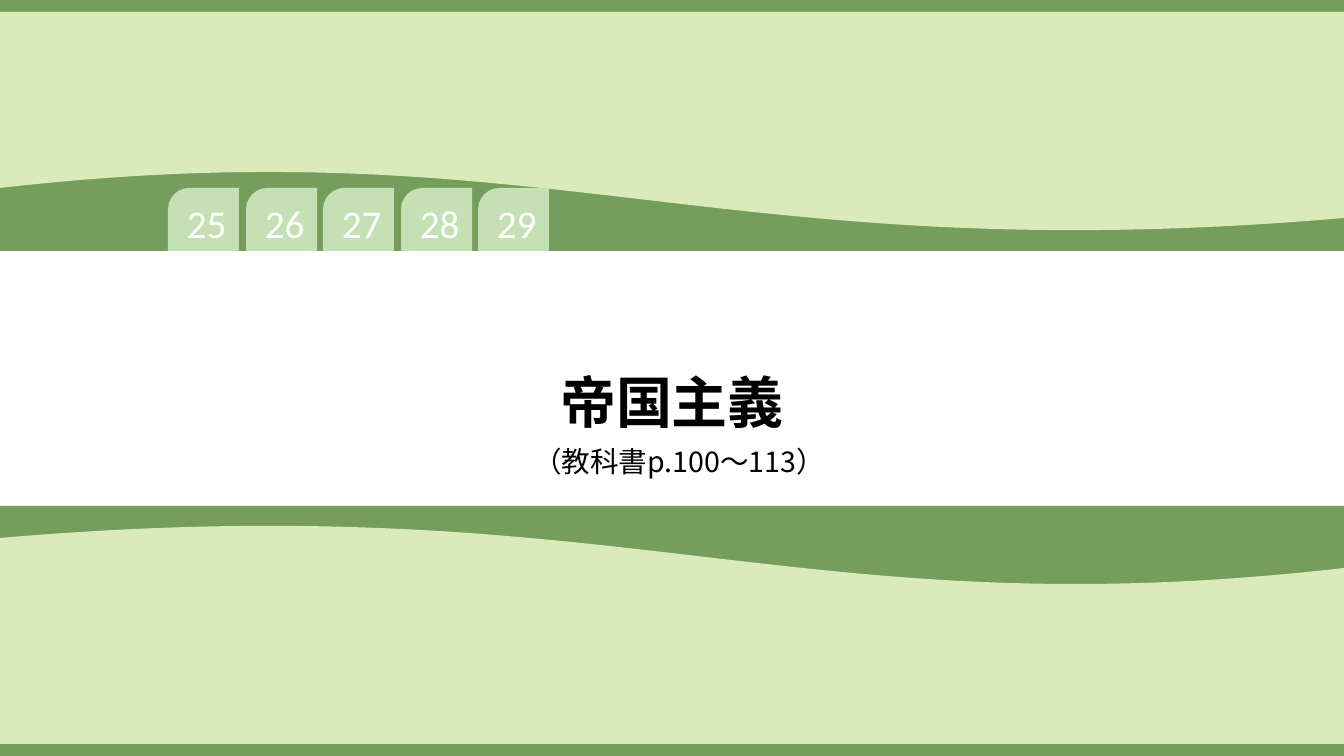
from dataclasses import dataclass

from lxml import etree
from pptx import Presentation
from pptx.dml.color import RGBColor
from pptx.enum.shapes import MSO_SHAPE
from pptx.enum.text import MSO_ANCHOR, MSO_AUTO_SIZE, PP_ALIGN
from pptx.oxml.ns import qn
from pptx.util import Pt

RECTANGLE = MSO_SHAPE.RECTANGLE
TAB_SHAPE = MSO_SHAPE.SNIP_ROUND_RECTANGLE
CENTER = PP_ALIGN.CENTER
MIDDLE, BOTTOM = MSO_ANCHOR.MIDDLE, MSO_ANCHOR.BOTTOM
NO_AUTOFIT = MSO_AUTO_SIZE.NONE

EMU_PER_PX = 914400 / 100.8
WIDTH, HEIGHT = 1344, 756
EDGE = 12
# Top and height of each dark band
BANDS = ((0, EDGE), (HEIGHT - EDGE, EDGE), (13, 238), (506, 238))
CURVE_START, CURVE_END = (0, 188), (WIDTH, 218)
CURVE_CONTROLS = [(551, 125), (718, 272)]
CURVE_LOWEST = (1080, 230)


@dataclass(frozen=True)
class Theme:
    dark_green: RGBColor = RGBColor(0x75, 0x9E, 0x5C)
    light_green: RGBColor = RGBColor(0xDA, 0xEA, 0xBA)
    tab_green: RGBColor = RGBColor(0xC5, 0xE0, 0xB4)
    black: RGBColor = RGBColor(0, 0, 0)
    white: RGBColor = RGBColor(0xFF, 0xFF, 0xFF)
    japanese_font: str = "Noto Sans CJK JP"
    number_font: str = "Calibri"
    title_size: float = 40
    subtitle_size: float = 20.4
    tab_size: float = 28


THEME = Theme()


def px(value):
    return round(value * EMU_PER_PX)


def set_fill(shape, color):
    shape.shadow.inherit = False
    shape.fill.solid()
    shape.fill.fore_color.rgb = color
    shape.line.fill.background()


def add_block(slide, kind, box, color):
    shape = slide.shapes.add_shape(kind, *map(px, box))
    set_fill(shape, color)
    return shape


def write_text(shape, text, anchor, font_name, size, color, bold=False, bottom=0):
    frame = shape.text_frame
    frame_format = {
        "word_wrap": True, "auto_size": NO_AUTOFIT, "vertical_anchor": anchor,
        "margin_left": 0, "margin_right": 0, "margin_top": 0,
        "margin_bottom": px(bottom),
    }
    for name, value in frame_format.items():
        setattr(frame, name, value)
    paragraph = frame.paragraphs[0]
    paragraph.alignment = CENTER
    paragraph.space_before = Pt(0)
    run = paragraph.add_run()
    run.text = text
    font_format = {"name": font_name, "size": Pt(size), "bold": bold}
    for name, value in font_format.items():
        setattr(run.font, name, value)
    run.font.color.rgb = color
    # East Asian characters take their typeface from a separate element
    east_asian = etree.SubElement(run.font._element, qn("a:ea"))
    east_asian.set("typeface", font_name)


def place(shape, box):
    for name, value in zip(("left", "top", "width", "height"), box):
        setattr(shape, name, px(value))


def add_wave(slide, turned):
    """Light field with a curved edge; turned rotates it by half a turn."""
    def to_emu(points):
        if turned:
            points = [(WIDTH - x, HEIGHT - y) for x, y in points]
        return [(px(x), px(y)) for x, y in points]

    outline = to_emu([(WIDTH, EDGE), (0, EDGE), CURVE_START, CURVE_LOWEST,
                      CURVE_END])
    builder = slide.shapes.build_freeform(*outline[0])
    builder.add_line_segments(outline[1:], close=True)
    wave = builder.convert_to_shape()
    set_fill(wave, THEME.light_green)

    # The last two line segments become one Bezier curve
    *_, lowest, end = wave._element.iter(qn("a:lnTo"))
    curve = etree.Element(qn("a:cubicBezTo"))
    for x, y in to_emu(CURVE_CONTROLS + [CURVE_END]):
        point = etree.SubElement(curve, qn("a:pt"))
        point.set("x", str(x - wave.left))
        point.set("y", str(y - wave.top))
    outline_path = end.getparent()
    outline_path.remove(lowest)
    outline_path.replace(end, curve)


def add_background(slide):
    for top, height in BANDS:
        add_block(slide, RECTANGLE, (0, top, WIDTH, height), THEME.dark_green)
    for turned in (False, True):
        add_wave(slide, turned)


def add_tab(slide, index, number):
    left = 168 + (index * 310 + 2) // 4
    tab = add_block(slide, TAB_SHAPE, (left, 188, 71, 63), THEME.tab_green)
    tab.adjustments[0] = 0.34
    tab.adjustments[1] = 0
    write_text(tab, str(number), MIDDLE, THEME.number_font, THEME.tab_size,
               THEME.white)


def main():
    presentation = Presentation()
    presentation.slide_width, presentation.slide_height = px(WIDTH), px(HEIGHT)
    slide = presentation.slides.add_slide(presentation.slide_layouts[0])

    # Green bands and waves
    add_background(slide)

    # Lesson number tabs
    for index, number in enumerate(range(25, 30)):
        add_tab(slide, index, number)

    # Title and textbook pages
    title, subtitle = slide.placeholders
    place(title, (168, 291, 1008, 148))
    write_text(title, "帝国主義", BOTTOM, THEME.japanese_font,
               THEME.title_size, THEME.black, bold=True, bottom=4)
    place(subtitle, (175, 442, 1008, 39))
    write_text(subtitle, "（教科書p.100～113）", MIDDLE, THEME.japanese_font,
               THEME.subtitle_size, THEME.black)

    presentation.save("out.pptx")


if __name__ == "__main__":
    main()
